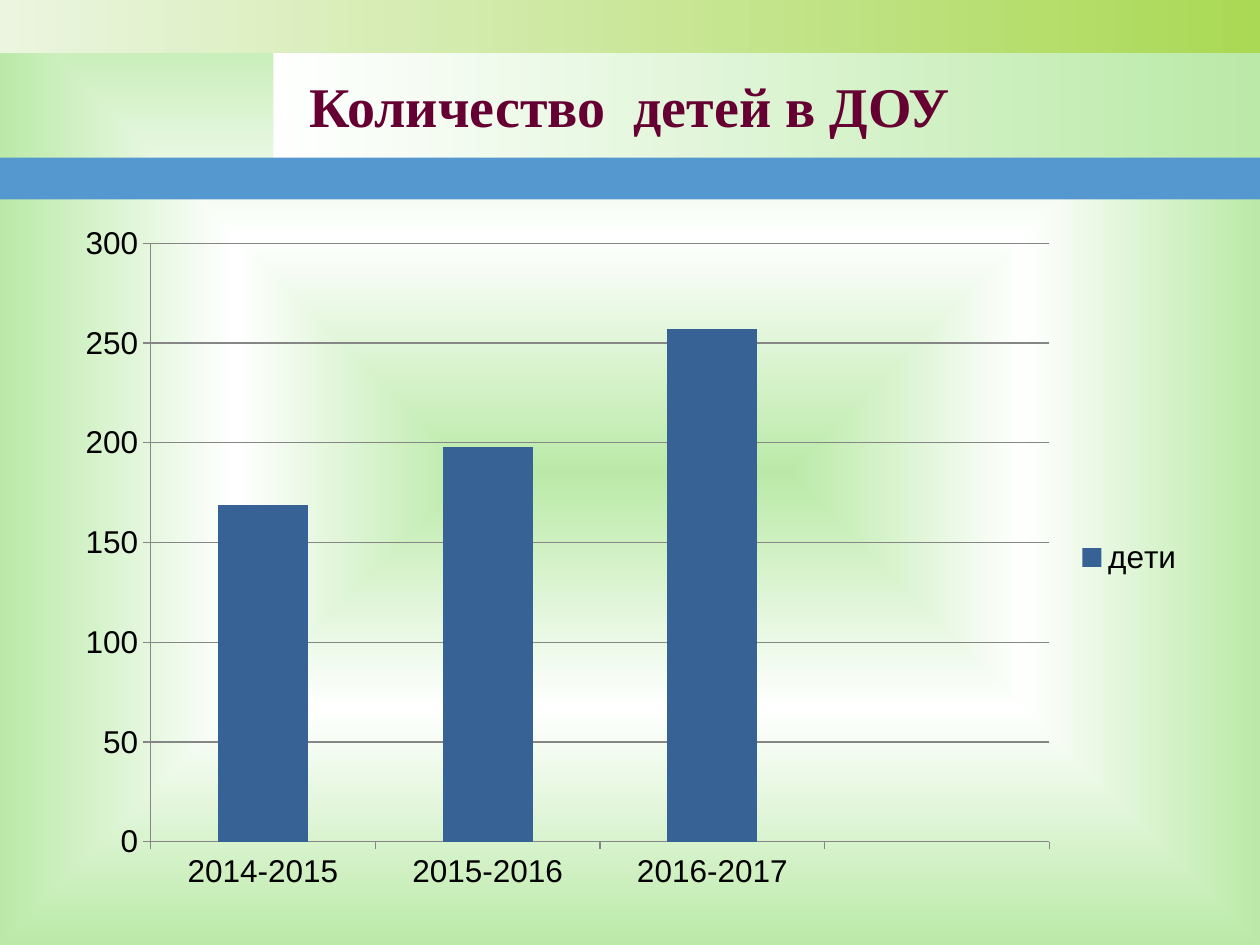
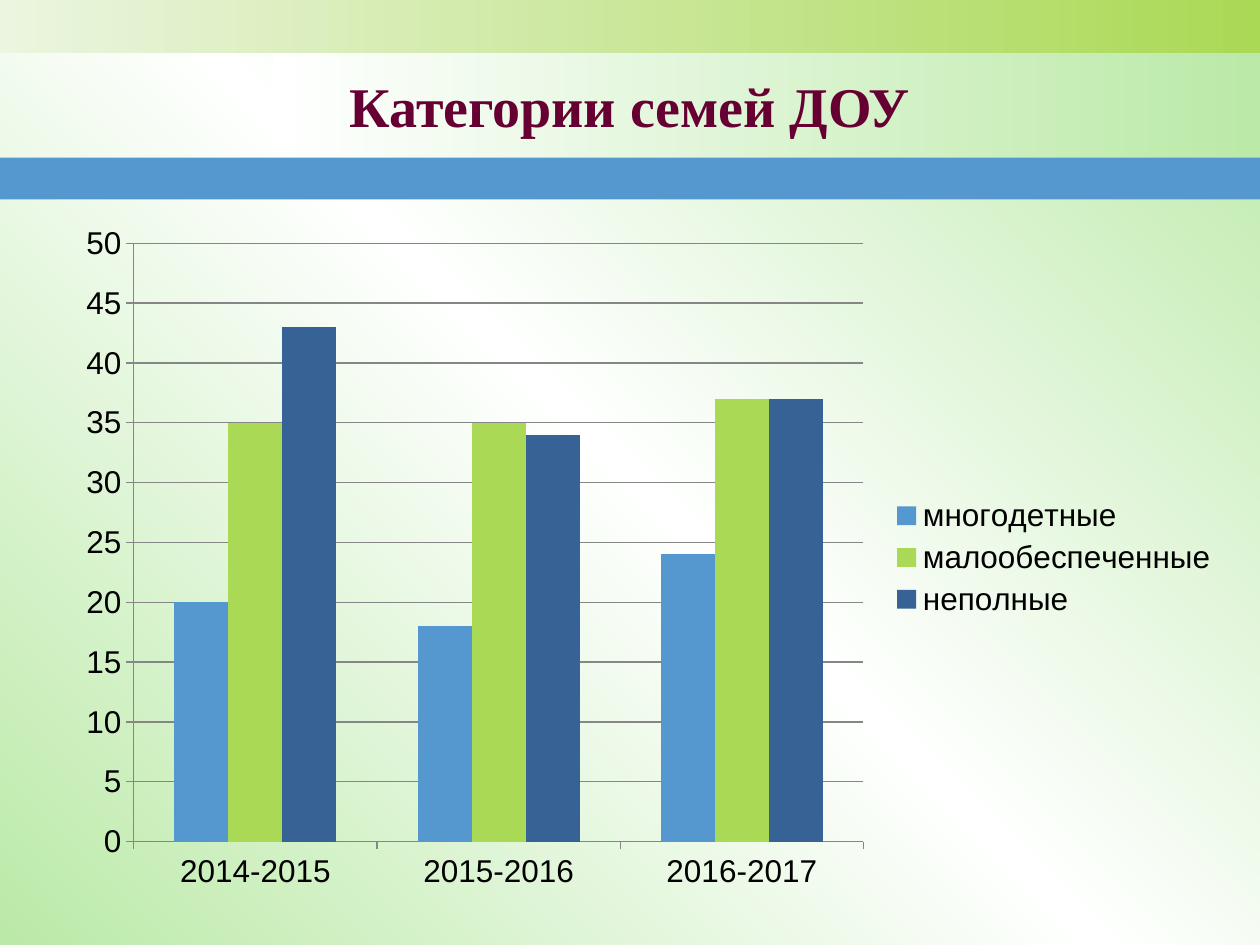
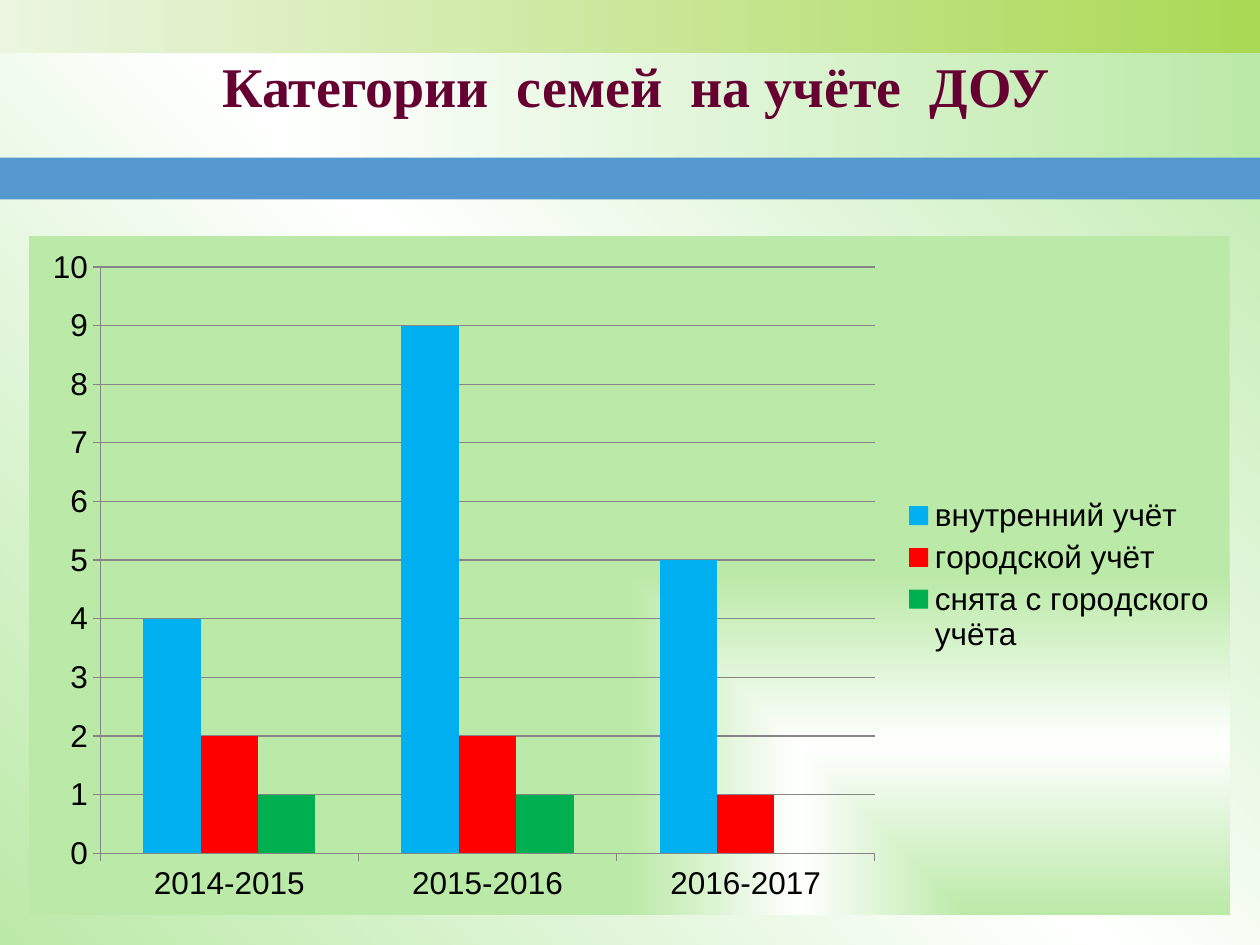
from lxml import etree
from pptx import Presentation
from pptx.chart.data import CategoryChartData
from pptx.dml.color import RGBColor
from pptx.enum.chart import XL_CHART_TYPE as ChartType, XL_LEGEND_POSITION as LegendPos
from pptx.enum.chart import XL_TICK_MARK as Tick
from pptx.enum.shapes import MSO_SHAPE as Shape
from pptx.enum.text import MSO_ANCHOR as Anchor, PP_ALIGN as Align
from pptx.oxml import parse_xml
from pptx.oxml.ns import nsdecls, qn
from pptx.util import Cm, Pt

COLORS = {
    "mint": "BBEAA8", "white": "FFFFFF", "pale": "EBF5DF", "lime": "AAD955",
    "blue": "5598CF", "navy": "366296", "wine": "660033", "black": "000000",
    "grey": "868686", "sky": "00B0F0", "red": "FF0000", "green": "00B050",
}
WIDTH, HEIGHT = 25.4, 19.05
MINT_WHITE_MINT = ("mint", "white", "mint")
YEARS = ["2014-2015", "2015-2016", "2016-2017"]
TITLE_BOX = (1.27, 1.07, 22.86, 2.08)

LINEAR_RIGHT = '<a:lin ang="0" scaled="0"/>'
LINEAR_UP_RIGHT = '<a:lin ang="18900000" scaled="0"/>'
FROM_CENTRE = ('<a:path path="shape"><a:fillToRect l="50000" t="50000" '
               'r="50000" b="50000"/></a:path>')
FROM_CORNER = '<a:path path="rect"><a:fillToRect l="100000" t="100000"/></a:path>'


def rgb(name):
    return RGBColor.from_string(COLORS[name])


def gradient(names, direction):
    """Return a gradFill element with evenly spaced stops."""
    step = 100000 // (len(names) - 1)
    stops = "".join(
        f'<a:gs pos="{i * step}"><a:srgbClr val="{COLORS[n]}"/></a:gs>'
        for i, n in enumerate(names))
    return parse_xml(f'<a:gradFill {nsdecls("a")} rotWithShape="1">'
                     f'<a:gsLst>{stops}</a:gsLst>{direction}</a:gradFill>')


def swap_solid(parent, grad):
    """Put a gradient where the parent has its solid fill."""
    solid = parent.find(qn("a:solidFill"))
    parent.replace(solid, grad)


class Deck:
    def __init__(self):
        self.prs = Presentation()
        self.prs.slide_width, self.prs.slide_height = Cm(WIDTH), Cm(HEIGHT)
        self.s = None

    def slide(self, title, direction, title_box=TITLE_BOX):
        self.s = self.prs.slides.add_slide(self.prs.slide_layouts[6])
        fill = self.s.background.fill
        fill.solid()
        fill.fore_color.rgb = rgb("mint")
        bg = self.s._element.find(".//" + qn("p:bgPr"))
        swap_solid(bg, gradient(MINT_WHITE_MINT, direction))
        self.band(0, 0, 1.07, "pale", "lime")
        self.band(5.51, 1.07, 2.11, "white", "mint")
        self.band(0, 3.18, 0.84, "blue")
        self.title(title, title_box)

    def band(self, left, top, height, *names):
        """Draw a band that reaches the right edge, plain or shaded."""
        sp = self.s.shapes.add_shape(Shape.RECTANGLE, Cm(left), Cm(top),
                                     Cm(WIDTH - left), Cm(height))
        sp.shadow.inherit = False
        sp.line.fill.background()
        sp.fill.solid()
        sp.fill.fore_color.rgb = rgb(names[0])
        if len(names) > 1:
            swap_solid(sp._element.spPr, gradient(names, LINEAR_RIGHT))

    def title(self, text, box):
        tf = self.s.shapes.add_textbox(*map(Cm, box)).text_frame
        tf.word_wrap = True
        tf.vertical_anchor = Anchor.MIDDLE
        p = tf.paragraphs[0]
        p.alignment = Align.CENTER
        r = p.add_run()
        r.text = text
        r.font.name, r.font.size, r.font.bold = "Times New Roman", Pt(32), True
        r.font.color.rgb = rgb("wine")

    def chart(self, box, cats, series, fill=None):
        """Add a column chart; series holds (name, values, colour)."""
        data = CategoryChartData()
        data.categories = cats
        for name, vals, _ in series:
            data.add_series(name, vals)
        chart = self.s.shapes.add_chart(ChartType.COLUMN_CLUSTERED,
                                        *map(Cm, box), data).chart
        chart.has_title = False
        chart.font.name, chart.font.size = "Arial", Pt(18)
        chart.font.color.rgb = rgb("black")
        chart.has_legend = True
        chart.legend.position = LegendPos.RIGHT
        chart.legend.include_in_layout = False
        plot = chart.plots[0]
        plot.gap_width = 150
        plot.vary_by_categories = False
        for ser, (_, _, color) in zip(plot.series, series):
            ser.format.fill.solid()
            ser.format.fill.fore_color.rgb = rgb(color)
        val_axis, cat_axis = chart.value_axis, chart.category_axis
        val_axis.has_major_gridlines = True
        for axis in (val_axis, cat_axis):
            axis.major_tick_mark = Tick.OUTSIDE
            axis.minor_tick_mark = Tick.NONE
        for part in (val_axis, cat_axis, val_axis.major_gridlines):
            part.format.line.color.rgb = rgb("grey")
            part.format.line.width = Pt(0.75)
        if fill is not None:
            sp_pr = parse_xml(f'<c:spPr {nsdecls("c", "a")}/>')
            sp_pr.append(fill)
            etree.SubElement(sp_pr, qn("a:ln")).append(
                parse_xml(f'<a:noFill {nsdecls("a")}/>'))
            chart._chartSpace.find(qn("c:txPr")).addprevious(sp_pr)


def main():
    deck = Deck()

    deck.slide("Количество  детей в ДОУ", FROM_CENTRE)
    deck.chart((1.27, 4.27, 22.86, 13.94), YEARS + [""],
               [("дети", (169, 198, 257, None), "navy")])

    deck.slide("Категории семей ДОУ", LINEAR_UP_RIGHT)
    deck.chart((1.27, 4.27, 23.55, 13.94), YEARS,
               [("многодетные", (20, 18, 24), "blue"),
                ("малообеспеченные", (35, 35, 37), "lime"),
                ("неполные", (43, 34, 37), "navy")])

    deck.slide("Категории  семей  на учёте  ДОУ", LINEAR_UP_RIGHT,
               (1.4, 0.99, 22.86, 1.47))
    deck.chart((0.58, 4.75, 24.21, 13.69), YEARS,
               [("внутренний учёт", (4, 9, 5), "sky"),
                ("городской учёт", (2, 2, 1), "red"),
                ("снята с городского учёта", (1, 1, None), "green")],
               gradient(MINT_WHITE_MINT, FROM_CORNER))

    deck.prs.save("out.pptx")


if __name__ == "__main__":
    main()
